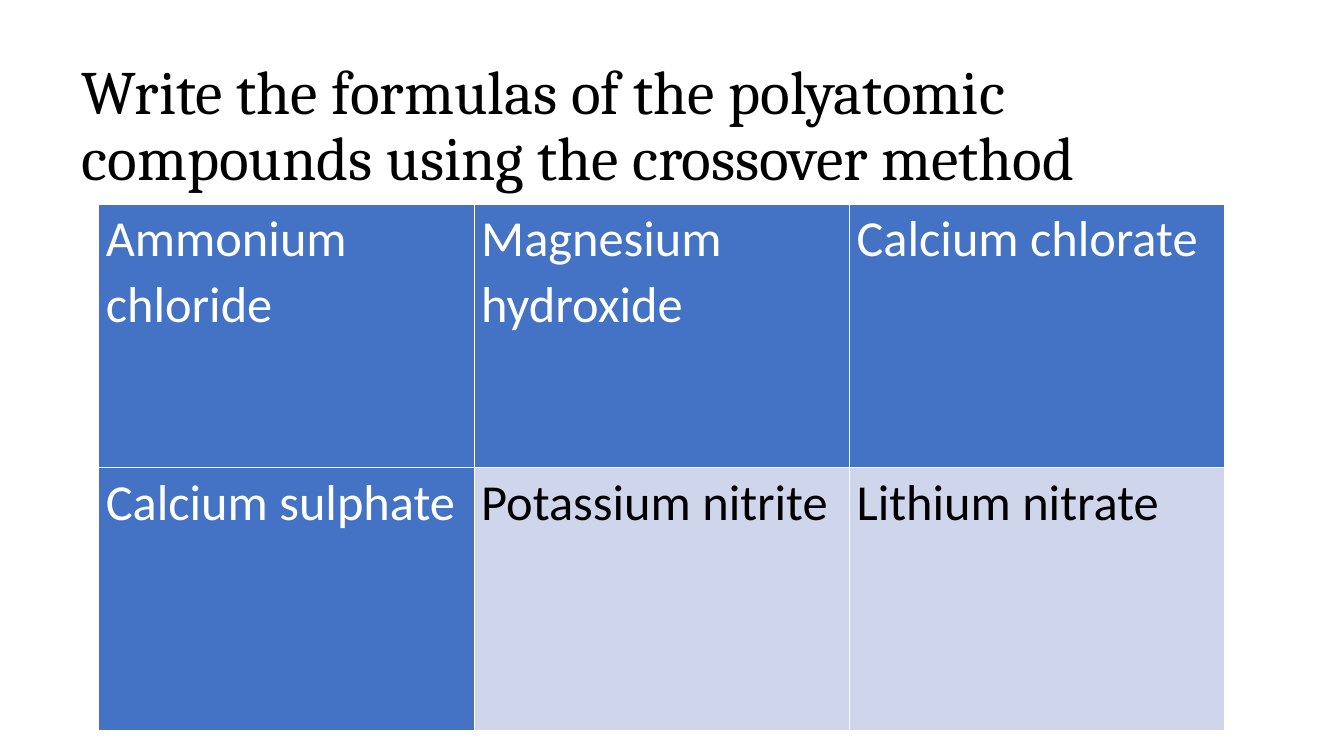
from pptx import Presentation
from pptx.dml.color import RGBColor
from pptx.enum.text import MSO_ANCHOR, MSO_AUTO_SIZE, PP_ALIGN
from pptx.oxml import parse_xml
from pptx.oxml.ns import nsdecls
from pptx.util import Inches, Pt

BLACK = RGBColor(0x00, 0x00, 0x00)
WHITE = RGBColor(0xFF, 0xFF, 0xFF)
BLUE = RGBColor(0x44, 0x72, 0xC4)
PALE_BLUE = RGBColor(0xCF, 0xD5, 0xEA)

TITLE = "Write the formulas of the polyatomic compounds using the crossover method"
COMPOUNDS = [
    ["Ammonium chloride", "Magnesium hydroxide", "Calcium chlorate"],
    ["Calcium sulphate", "Potassium nitrite", "Lithium nitrate"],
]


def write(tf, text, *, size, font, color, spacing):
    """Put one left-aligned paragraph in a text frame."""
    p = tf.paragraphs[0]
    p.alignment = PP_ALIGN.LEFT
    p.line_spacing = spacing
    r = p.add_run()
    r.text = text
    r.font.size, r.font.name, r.font.bold = Pt(size), font, False
    r.font.color.rgb = color


def set_borders(cell, color, width):
    tc_pr = cell._tc.get_or_add_tcPr()
    for i, side in enumerate(("lnL", "lnR", "lnT", "lnB")):
        tc_pr.insert(i, parse_xml(
            f'<a:{side} {nsdecls("a")} w="{Pt(width)}"><a:solidFill>'
            f'<a:srgbClr val="{color}"/></a:solidFill></a:{side}>'))


def add_title(slide, left, top, width, height):
    sp = slide.shapes.title
    sp.left, sp.top, sp.width, sp.height = left, top, width, height
    tf = sp.text_frame
    tf.word_wrap = True
    tf.auto_size = MSO_AUTO_SIZE.NONE
    tf.vertical_anchor = MSO_ANCHOR.MIDDLE
    write(tf, TITLE, size=44, font="Cambria", color=BLACK, spacing=0.9)


def add_compounds(slide, left, top, width, height):
    rows, cols = len(COMPOUNDS), len(COMPOUNDS[0])
    table = slide.shapes.add_table(rows, cols, left, top, width, height).table
    for i, names in enumerate(COMPOUNDS):
        for j, name in enumerate(names):
            # The first row and the first column are headers
            header = i == 0 or j == 0
            cell = table.cell(i, j)
            cell.margin_left = cell.margin_right = Inches(0.07)
            cell.margin_top = cell.margin_bottom = 0
            cell.vertical_anchor = MSO_ANCHOR.TOP
            cell.fill.solid()
            cell.fill.fore_color.rgb = BLUE if header else PALE_BLUE
            set_borders(cell, WHITE, 1)
            write(cell.text_frame, name, size=36, font="Calibri",
                  color=WHITE if header else BLACK, spacing=1.07)


def main():
    prs = Presentation()
    prs.slide_width, prs.slide_height = Inches(13.33), Inches(7.5)
    slide = prs.slides.add_slide(prs.slide_layouts[5])

    # Title above, table of compounds below
    add_title(slide, Inches(0.71), Inches(0.5), Inches(11.71), Inches(1.53))
    add_compounds(slide, Inches(0.98), Inches(2.03), Inches(11.17), Inches(5.22))

    prs.save("out.pptx")


if __name__ == "__main__":
    main()
